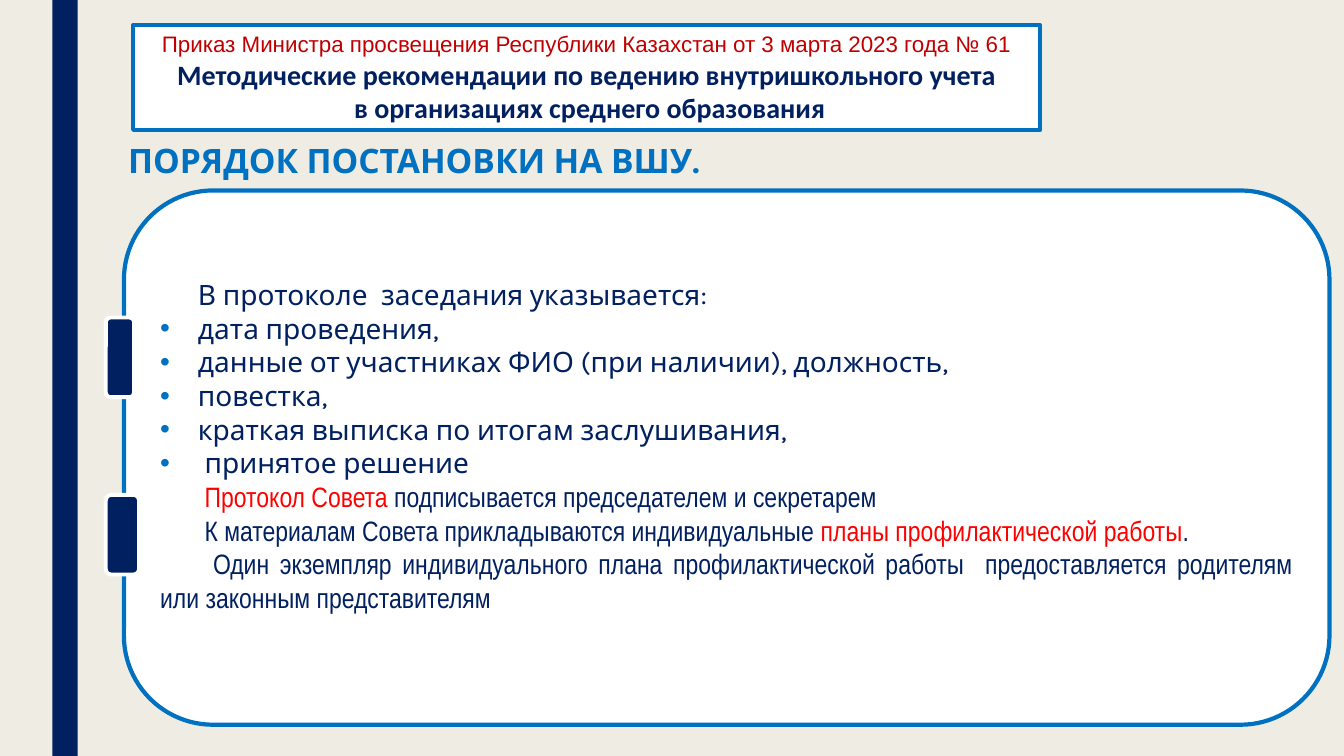
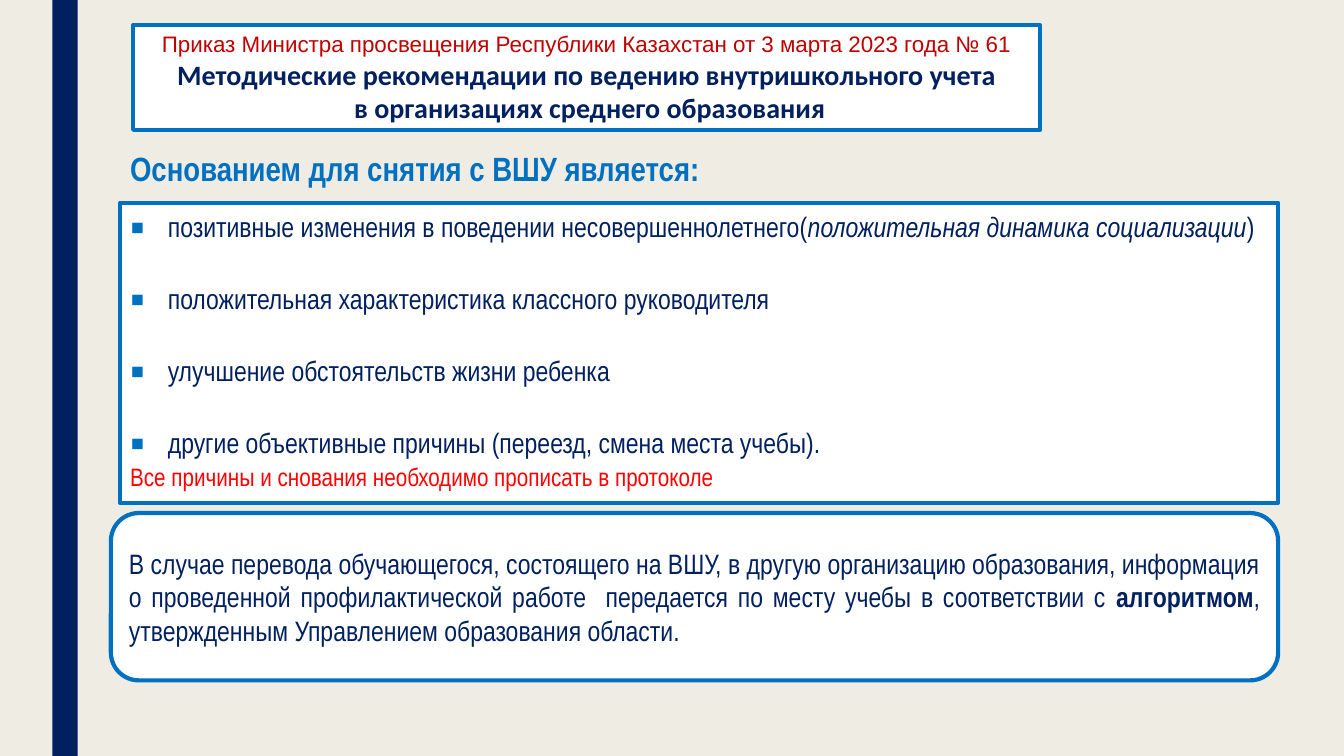
from dataclasses import dataclass
from typing import Optional

import pptx
import pptx.dml.color
import pptx.enum.shapes
import pptx.enum.text
import pptx.oxml.ns
import pptx.util
from lxml import etree

RGBColor = pptx.dml.color.RGBColor
MSO_SHAPE = pptx.enum.shapes.MSO_SHAPE
PP_ALIGN = pptx.enum.text.PP_ALIGN
MSO_ANCHOR = pptx.enum.text.MSO_ANCHOR
Pt = pptx.util.Pt
qn = pptx.oxml.ns.qn

NAVY = RGBColor(0x00, 0x20, 0x60)
BLUE = RGBColor(0x00, 0x70, 0xC0)
RED = RGBColor(0xFF, 0x00, 0x00)
DARK_RED = RGBColor(0xC0, 0x00, 0x00)
WHITE = RGBColor(0xFF, 0xFF, 0xFF)
CREAM = RGBColor(0xEF, 0xED, 0xE3)

NARROW = "Arial Narrow"
KARLA = "Karla"

# The slide is a grid of 160 columns by 90 rows of square cells.
COLUMNS, ROWS = 160, 90
CELL = pptx.util.Inches(7.5) / ROWS
HANG = 4.5  # columns between a bullet and its text


def cells(count: float) -> int:
    return round(count * CELL)


@dataclass(frozen=True)
class Area:
    column: float
    row: float
    columns: float
    rows: float


@dataclass(frozen=True)
class Run:
    text: str
    color: Optional[RGBColor] = None
    bold: Optional[bool] = None
    italic: Optional[bool] = None


@dataclass(frozen=True)
class Bullet:
    char: str
    percent: int = 100


@dataclass(frozen=True)
class Para:
    runs: tuple[Run, ...]
    font: str = NARROW
    size: float = 20
    color: RGBColor = NAVY
    bold: bool = False
    align: PP_ALIGN = PP_ALIGN.JUSTIFY
    margin: float = 0
    first_line: float = 0
    bullet: Optional[Bullet] = None
    gap: float = 0
    spacing: float = 1.0


DOT = Bullet("•")
SQUARE = Bullet("▪", 150)

BAND = Area(6.24, 0, 3, ROWS)
HEADER = Area(15.84, 3, 108, 12.48)
HEADER_TEXT = (
    Para((Run("Приказ Министра просвещения Республики Казахстан от 3 марта 2023 года № 61"),),
         font="Arial", size=16, color=DARK_RED, align=PP_ALIGN.CENTER),
    *(Para((Run(line),), font="Calibri", bold=True, align=PP_ALIGN.CENTER)
      for line in ("Методические рекомендации по ведению внутришкольного учета",
                   " в организациях среднего образования")),
)

PROTOCOL_ITEMS = (
    "дата проведения, ",
    "данные от участниках ФИО (при наличии), должность, ",
    "повестка, ",
    "краткая выписка по итогам заслушивания,",
    " принятое решение",
)
PROTOCOL_TEXT = (
    Para((Run("В протоколе  заседания указывается:"),), font=KARLA, margin=HANG),
    *(Para((Run(item),), font=KARLA, margin=HANG, first_line=-HANG, bullet=DOT)
      for item in PROTOCOL_ITEMS),
    Para((Run("Протокол Совета ", RED), Run("подписывается председателем и секретарем")),
         first_line=5.3),
    Para((Run("К материалам Совета прикладываются индивидуальные "),
          Run("планы профилактической работы", RED), Run(". ")), first_line=5.3),
    Para((Run("Один экземпляр индивидуального плана профилактической работы  "
              "предоставляется родителям или законным представителям "),), first_line=6.3),
)

REMOVAL_ITEMS = (
    (Run("позитивные изменения в поведении несовершеннолетнего("),
     Run("положительная динамика социализации", italic=True), Run(")")),
    (Run("положительная характеристика классного руководителя"),),
    (Run("улучшение обстоятельств жизни ребенка"),),
    (Run("другие объективные причины (переезд, смена места учебы). "),),
)
REMOVAL_TEXT = (
    *(Para(item, margin=HANG, first_line=-HANG, bullet=SQUARE, spacing=1.07,
           gap=25.7 if index else 0)
      for index, item in enumerate(REMOVAL_ITEMS)),
    Para((Run("Все причины и снования необходимо прописать в протоколе"),),
         size=18, color=RED, spacing=1.07),
)

TRANSFER_TEXT = (
    Para((Run("В случае перевода обучающегося, состоящего на ВШУ, в другую организацию "
              "образования, информация о проведенной профилактической работе  передается "
              "по месту учебы в соответствии с "),
          Run("алгоритмом", bold=True),
          Run(", утвержденным Управлением образования области."))),
)


def place(shape, area: Area) -> None:
    shape.left, shape.top = cells(area.column), cells(area.row)
    shape.width, shape.height = cells(area.columns), cells(area.rows)


def paint(shape, fill: RGBColor, line: Optional[RGBColor], width: float) -> None:
    shape.fill.solid()
    shape.fill.fore_color.rgb = fill
    if line is None:
        shape.line.fill.background()
    else:
        shape.line.color.rgb = line
        shape.line.width = Pt(width)


def add_box(slide, kind: MSO_SHAPE, area: Area, fill: RGBColor = WHITE,
            line: Optional[RGBColor] = BLUE, width: float = 2.75):
    box = slide.shapes.add_shape(kind, 0, 0, 0, 0)
    place(box, area)
    paint(box, fill, line, width)
    box.shadow.inherit = False
    return box


def set_bullet(paragraph, para: Para) -> None:
    properties = paragraph._p.get_or_add_pPr()
    properties.set("marL", str(cells(para.margin)))
    properties.set("indent", str(cells(para.first_line)))
    if para.bullet is None:
        etree.SubElement(properties, qn("a:buNone"))
        return
    color = etree.SubElement(properties, qn("a:buClr"))
    etree.SubElement(color, qn("a:srgbClr"), val=str(BLUE))
    etree.SubElement(properties, qn("a:buSzPct"), val=str(para.bullet.percent * 1000))
    etree.SubElement(properties, qn("a:buFont"), typeface="Arial")
    etree.SubElement(properties, qn("a:buChar"), char=para.bullet.char)


def write(shape, paras: tuple[Para, ...], anchor: MSO_ANCHOR = MSO_ANCHOR.TOP) -> None:
    frame = shape.text_frame
    frame.word_wrap = True
    frame.auto_size = pptx.enum.text.MSO_AUTO_SIZE.NONE
    frame.vertical_anchor = anchor
    for index, para in enumerate(paras):
        paragraph = frame.add_paragraph() if index else frame.paragraphs[0]
        set_bullet(paragraph, para)
        paragraph.alignment = para.align
        paragraph.line_spacing = para.spacing
        paragraph.space_before = Pt(para.gap)
        paragraph.font.name = para.font
        paragraph.font.size = Pt(para.size)
        paragraph.font.bold = para.bold
        paragraph.font.color.rgb = para.color
        for part in para.runs:
            run = paragraph.add_run()
            run.text = part.text
            if part.color is not None:
                run.font.color.rgb = part.color
            if part.bold is not None:
                run.font.bold = part.bold
            if part.italic is not None:
                run.font.italic = part.italic


def fill_body(slide, area: Area, paras: tuple[Para, ...], preset: str, width: float,
              anchor: MSO_ANCHOR):
    """Turn the body placeholder into an outlined panel that holds the list."""
    body = slide.placeholders[1]
    place(body, area)
    geometry = etree.SubElement(body.element.spPr, qn("a:prstGeom"), prst=preset)
    etree.SubElement(geometry, qn("a:avLst"))
    paint(body, WHITE, BLUE, width)
    write(body, paras, anchor)
    return body


def add_slide(deck, heading: str, font: str, area: Area):
    """Add a slide with the side band, the order's header and a title."""
    slide = deck.slides.add_slide(deck.slide_layouts[1])
    add_box(slide, MSO_SHAPE.RECTANGLE, BAND, NAVY, None)
    write(add_box(slide, MSO_SHAPE.RECTANGLE, HEADER), HEADER_TEXT)
    place(slide.shapes.title, area)
    write(slide.shapes.title,
          (Para((Run(heading),), font=font, size=24, color=BLUE, bold=True,
                align=PP_ALIGN.LEFT),))
    return slide


def add_registration(deck) -> None:
    slide = add_slide(deck, "ПОРЯДОК ПОСТАНОВКИ НА ВШУ.", KARLA,
                      Area(14.04, 16.08, 110.4, 6))
    protocol = fill_body(slide, Area(14.76, 22.68, 143.52, 63.6), PROTOCOL_TEXT,
                         "roundRect", 3, MSO_ANCHOR.MIDDLE)
    protocol.text_frame.margin_bottom = cells(3.4)
    for row, columns in ((37.8, 3.36), (58.92, 3.96)):
        add_box(slide, MSO_SHAPE.ROUNDED_RECTANGLE, Area(12.6, row, columns, 9.48),
                NAVY, WHITE)


def add_removal(deck) -> None:
    slide = add_slide(deck, "Основанием для снятия с ВШУ является: ", NARROW,
                      Area(14.28, 17.04, 107.88, 6))
    fill_body(slide, Area(14.28, 24.12, 137.88, 35.76), REMOVAL_TEXT,
              "rect", 2.75, MSO_ANCHOR.TOP)
    transfer = add_box(slide, MSO_SHAPE.ROUNDED_RECTANGLE,
                       Area(13.2, 61.08, 138.96, 19.92), width=3)
    write(transfer, TRANSFER_TEXT, MSO_ANCHOR.MIDDLE)


def main() -> None:
    deck = pptx.Presentation()
    deck.slide_width, deck.slide_height = cells(COLUMNS), cells(ROWS)
    background = deck.slide_master.background.fill
    background.solid()
    background.fore_color.rgb = CREAM
    add_registration(deck)
    add_removal(deck)
    deck.save("out.pptx")


if __name__ == "__main__":
    main()
